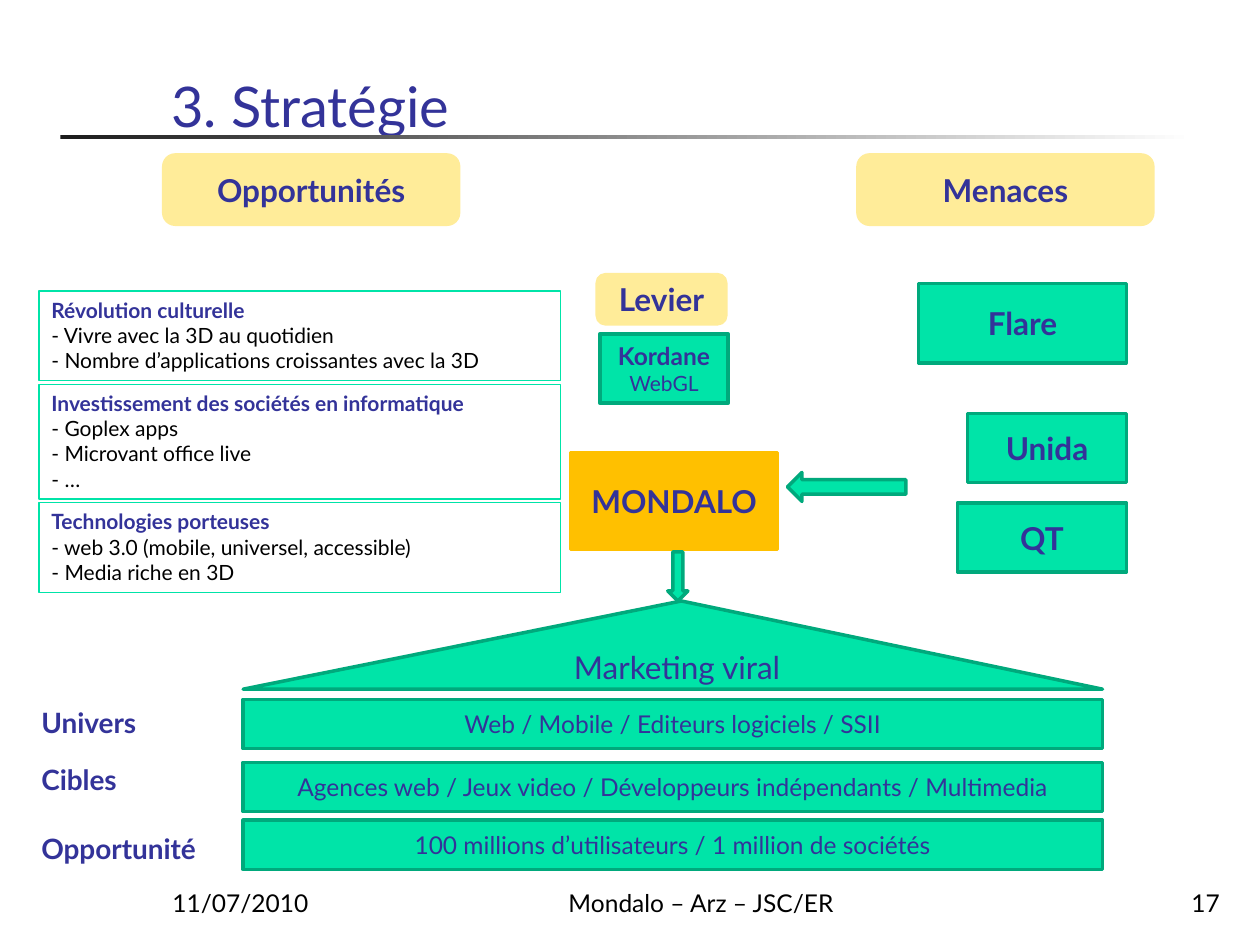
from pptx import Presentation
from pptx.dml.color import RGBColor
from pptx.enum.shapes import MSO_SHAPE as Preset
from pptx.enum.text import MSO_ANCHOR as Anchor, PP_ALIGN as Align
from pptx.util import Inches, Pt

FONT = "Lato"
NAVY = RGBColor(0x33, 0x33, 0x99)
GREEN = RGBColor(0x00, 0xE4, 0xA8)
DARK_GREEN = RGBColor(0x00, 0xA9, 0x7C)
YELLOW = RGBColor(0xFF, 0xEC, 0x99)
ORANGE = RGBColor(0xFF, 0xC0, 0x00)
CHARCOAL = RGBColor(0x1C, 0x1C, 0x1C)
BLACK = RGBColor(0, 0, 0)
WHITE = RGBColor(0xFF, 0xFF, 0xFF)


def write(shape, text, size=18, color=NAVY, bold=False, align=Align.CENTER,
          anchor=Anchor.MIDDLE, wrap=True, rest=None):
    """Fill the shape with lines of text; rest overrides the format after the first line."""
    frame = shape.text_frame
    frame.word_wrap = wrap
    frame.vertical_anchor = anchor
    for index, line in enumerate(text.split("\n")):
        paragraph = frame.paragraphs[0] if index == 0 else frame.add_paragraph()
        look = {"size": size, "color": color, "bold": bold}
        if index and rest:
            look.update(rest)
        paragraph.alignment = align
        run = paragraph.add_run()
        run.text = line
        run.font.name = FONT
        run.font.size = Pt(look["size"])
        run.font.bold = look["bold"]
        run.font.color.rgb = look["color"]


def add_text(slide, box, text, **text_format):
    write(slide.shapes.add_textbox(*map(Inches, box)), text, **text_format)


def add_block(slide, box, text="", preset=Preset.RECTANGLE, fill=GREEN,
              line=DARK_GREEN, weight=2, **text_format):
    shape = slide.shapes.add_shape(preset, *map(Inches, box))
    shape.shadow.inherit = False
    if fill is None:
        shape.fill.background()
    else:
        shape.fill.solid()
        shape.fill.fore_color.rgb = fill
    shape.line.color.rgb = line
    shape.line.width = Pt(weight)
    if text:
        write(shape, text, **text_format)
    return shape


def add_heading(slide, box, text):
    add_block(slide, box, text, Preset.ROUNDED_RECTANGLE, YELLOW, YELLOW, bold=True)


def add_title(slide, box, text):
    add_text(slide, box, text, size=32, align=Align.LEFT, anchor=Anchor.BOTTOM)
    rule = slide.shapes.add_shape(
        Preset.RECTANGLE, Inches(0.48), Inches(1.07), Inches(9), Inches(0.03))
    rule.shadow.inherit = False
    rule.line.fill.background()
    rule.fill.gradient()
    rule.fill.gradient_angle = 0
    for stop, color, position in zip(rule.fill.gradient_stops, (CHARCOAL, WHITE), (0, 1)):
        stop.color.rgb = color
        stop.position = position


def add_opportunities(slide, left, top, width):
    gap = 0.03
    groups = [
        (0.71, "Révolution culturelle\n- Vivre avec la 3D au quotidien\n"
               "- Nombre d’applications croissantes avec la 3D"),
        (0.91, "Investissement des sociétés en informatique\n- Goplex apps\n"
               "- Microvant office live\n- …"),
        (0.71, "Technologies porteuses\n- web 3.0 (mobile, universel, accessible)\n"
               "- Media riche en 3D"),
    ]
    for height, text in groups:
        add_block(slide, (left, top, width, height), text, fill=None, line=GREEN,
                  weight=0.75, size=12, bold=True, align=Align.LEFT, anchor=Anchor.TOP,
                  rest={"color": BLACK, "bold": False})
        top += height + gap


def add_lever(slide, left, top, width):
    add_heading(slide, (left, top, width, 0.39), "Levier")
    add_block(slide, (left + 0.02, top + 0.47, width, 0.55), "Kordane\nWebGL",
              size=14, bold=True, rest={"size": 12, "bold": False})


def add_product(slide, box):
    add_block(slide, box, "MONDALO", fill=ORANGE, line=ORANGE, bold=True)
    add_block(slide, (5.3, 4.38, 0.16, 0.39), preset=Preset.DOWN_ARROW)
    add_block(slide, (6.25, 3.75, 0.94, 0.23), preset=Preset.LEFT_ARROW)


def add_threats(slide, right):
    threats = [("Flare", 2.25, 1.65, 0.63), ("Unida", 3.28, 1.26, 0.55),
               ("QT", 3.99, 1.34, 0.55)]
    for name, top, width, height in threats:
        add_block(slide, (right - width, top, width, height), name, bold=True)


def add_market(slide, left, top, width):
    roof = add_block(slide, (left, top, width, 0.7), "Marketing viral", Preset.ISOSCELES_TRIANGLE)
    roof.adjustments[0] = 0.51
    rows = [
        ("Univers", 5.55, 5.55, "Web / Mobile / Editeurs logiciels / SSII"),
        ("Cibles", 6, 6.05, "Agences web / Jeux video / Développeurs indépendants / Multimedia"),
        ("Opportunité", 6.55, 6.51, "100 millions d’utilisateurs / 1 million de sociétés"),
    ]
    for label, label_top, bar_top, text in rows:
        add_text(slide, (0.23, label_top, 1.57, 0.37), label, size=16, bold=True,
                 align=Align.LEFT, anchor=Anchor.TOP, wrap=False)
        add_block(slide, (left, bar_top, width, 0.39), text, size=14)


def add_footer(slide, top, height):
    parts = [("11/07/2010", 1.27, 2.08, Align.LEFT),
             ("Mondalo – Arz – JSC/ER", 3.98, 3.17, Align.CENTER),
             ("17", 7.7, 2.08, Align.RIGHT)]
    for text, left, width, align in parts:
        add_text(slide, (left, top, width, height), text, size=14, color=BLACK,
                 align=align, anchor=Anchor.BOTTOM)


def main():
    presentation = Presentation()
    presentation.slide_width = Inches(10)
    presentation.slide_height = Inches(7.5)
    slide = presentation.slides.add_slide(presentation.slide_layouts[6])
    add_title(slide, (1.26, 0.23, 8.52, 0.92), "3. Stratégie")
    add_heading(slide, (1.3, 1.23, 2.34, 0.55), "Opportunités")
    add_heading(slide, (6.81, 1.23, 2.34, 0.55), "Menaces")
    add_opportunities(slide, 0.31, 2.31, 4.14)
    add_lever(slide, 4.74, 2.18, 1.02)
    add_market(slide, 1.93, 4.77, 6.82)
    add_product(slide, (4.53, 3.59, 1.64, 0.77))
    add_threats(slide, 8.94)
    add_footer(slide, 6.83, 0.5)
    presentation.save("out.pptx")


if __name__ == "__main__":
    main()
